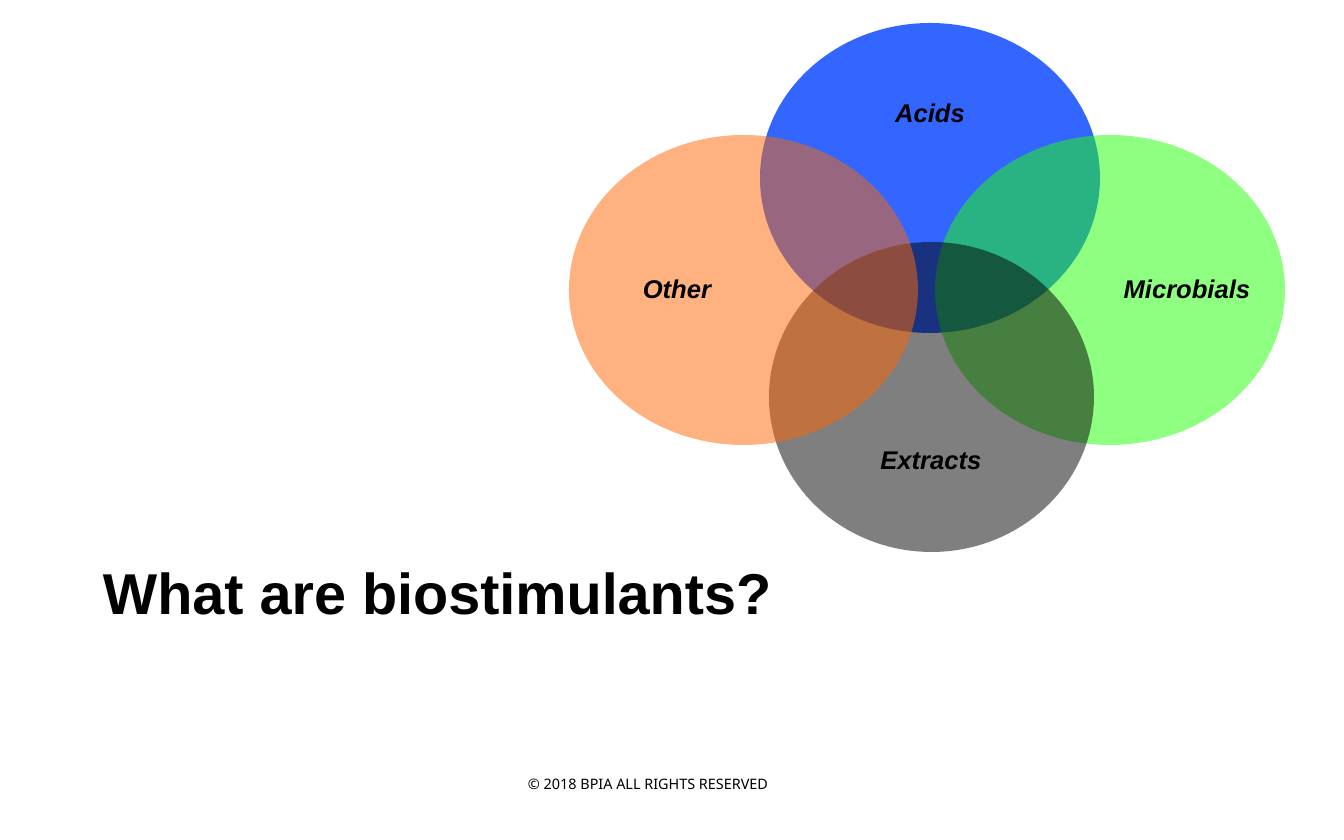
from collections import namedtuple

from lxml import etree
from pptx import Presentation
from pptx.dml.color import RGBColor
from pptx.enum.shapes import MSO_SHAPE
from pptx.enum.text import MSO_ANCHOR, MSO_AUTO_SIZE, PP_ALIGN
from pptx.oxml.ns import qn
from pptx.util import Emu, Pt

OVAL = MSO_SHAPE.OVAL
MIDDLE, BOTTOM, TOP = MSO_ANCHOR.MIDDLE, MSO_ANCHOR.BOTTOM, MSO_ANCHOR.TOP
LEFT, CENTER = PP_ALIGN.LEFT, PP_ALIGN.CENTER
NO_FIT = MSO_AUTO_SIZE.NONE
TITLE_ONLY = 5
EMU_PER_PX = 15875

Box = namedtuple("Box", "left top width height")
Group = namedtuple("Group", "name circle color opacity label_dx label_dy")


class Theme:
    text = "000000"
    acids = "3366FF"
    microbials = "21FF06"
    extracts = "000000"
    other = "FF6600"
    heading_font = "Arial"
    footer_font = "Noto Sans"
    title_size = 72
    label_size = 32
    footer_size = 18


PAGE = Box(0, 0, 1344, 840)
VENN = Box(569, 23, 716, 530)
TITLE = Box(29, 530, 1094, 101)
FOOTER = Box(514, 772, 268, 41)
LABEL_WIDTH, LABEL_HEIGHT = 140, 98

# Circles are placed relative to the diagram, labels relative to circle centres.
GROUPS = [
    Group("Acids", Box(191, 0, 340, 310), Theme.acids, 100, 0, -64),
    Group("Microbials", Box(366, 112, 350, 310), Theme.microbials, 50, 77, 0),
    Group("Extracts", Box(200, 219, 325, 310), Theme.extracts, 50, 0, 64),
    Group("Other", Box(0, 112, 349, 310), Theme.other, 50, -66, 0),
]


def px(length):
    return Emu(round(length * EMU_PER_PX))


def emu_box(box):
    return [px(length) for length in box]


def write_text(shape, text, font, size, anchor, align=CENTER,
               margins=(0, 0, 0, 0), bold=False, italic=False):
    """Fill a shape with one formatted line; margins run left, top, right, bottom."""
    frame = shape.text_frame
    frame.word_wrap = True
    frame.auto_size = NO_FIT
    frame.vertical_anchor = anchor
    (frame.margin_left, frame.margin_top,
     frame.margin_right, frame.margin_bottom) = emu_box(margins)
    para = frame.paragraphs[0]
    para.alignment = align
    span = para.add_run()
    span.text = text
    span.font.name = font
    span.font.size = Pt(size)
    span.font.bold = bold
    span.font.italic = italic
    span.font.color.rgb = RGBColor.from_string(Theme.text)
    return para


def add_circle(page, box, color, opacity):
    circle = page.shapes.add_shape(OVAL, *emu_box(box))
    circle.shadow.inherit = False
    circle.line.fill.background()
    circle.fill.solid()
    circle.fill.fore_color.rgb = RGBColor.from_string(color)
    if opacity < 100:
        color_node = circle.fill._xPr.find(".//" + qn("a:srgbClr"))
        alpha = etree.SubElement(color_node, qn("a:alpha"))
        alpha.set("val", str(opacity * 1000))


def add_venn(page, box):
    for group in GROUPS:
        circle = group.circle._replace(left=box.left + group.circle.left,
                                       top=box.top + group.circle.top)
        add_circle(page, circle, group.color, group.opacity)
        center_x = circle.left + circle.width // 2 + group.label_dx
        center_y = circle.top + circle.height // 2 + group.label_dy
        label_box = Box(center_x - LABEL_WIDTH // 2, center_y - LABEL_HEIGHT // 2,
                        LABEL_WIDTH, LABEL_HEIGHT)
        label = page.shapes.add_textbox(*emu_box(label_box))
        para = write_text(label, group.name, Theme.heading_font, Theme.label_size,
                          MIDDLE, bold=True, italic=True)
        para.line_spacing = 0.9


def add_title(page, box):
    title = page.shapes.title
    title.left, title.top, title.width, title.height = emu_box(box)
    write_text(title, "What are biostimulants?", Theme.heading_font,
               Theme.title_size, BOTTOM, LEFT, margins=(74, 4, 4, 5), bold=True)


def add_footer(page, box):
    footer = page.shapes.add_textbox(*emu_box(box))
    write_text(footer, "© 2018 BPIA ALL RIGHTS RESERVED", Theme.footer_font,
               Theme.footer_size, TOP, margins=(6, 3, 6, 3))


def main():
    deck = Presentation()
    deck.slide_width, deck.slide_height = px(PAGE.width), px(PAGE.height)
    page = deck.slides.add_slide(deck.slide_layouts[TITLE_ONLY])
    add_title(page, TITLE)
    add_venn(page, VENN)
    add_footer(page, FOOTER)
    deck.save("out.pptx")


if __name__ == "__main__":
    main()
